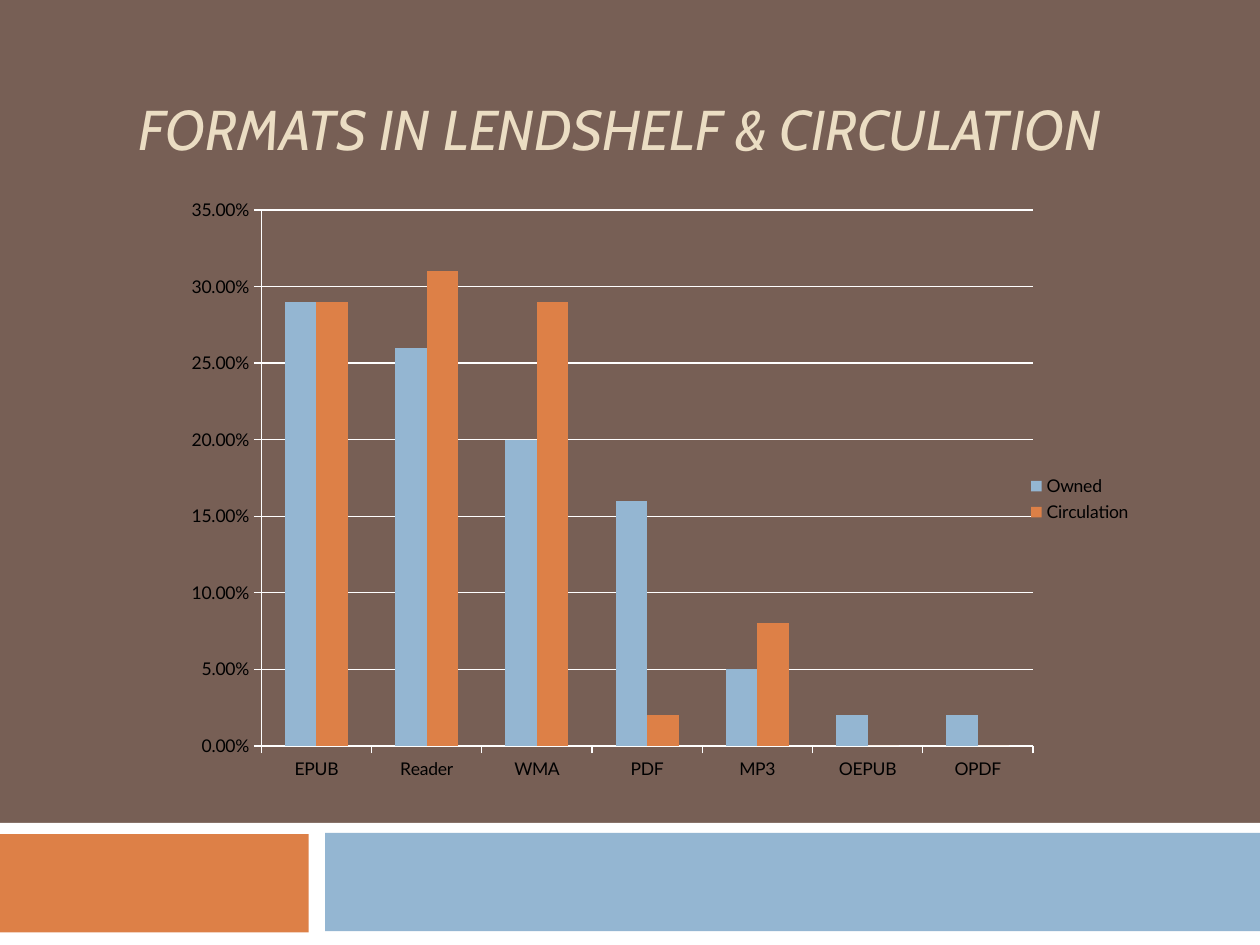
"""Build a slide comparing owned formats with their circulation."""
from typing import NamedTuple

from pptx import Presentation
from pptx.chart.chart import Chart
from pptx.chart.data import CategoryChartData
from pptx.dml.color import RGBColor
from pptx.enum.chart import XL_CHART_TYPE, XL_LEGEND_POSITION, XL_TICK_MARK
from pptx.enum.shapes import MSO_SHAPE
from pptx.enum.text import MSO_ANCHOR
from pptx.oxml import parse_xml
from pptx.oxml.ns import nsdecls, qn
from pptx.slide import Slide
from pptx.text.text import Font
from pptx.util import Pt

BROWN = RGBColor(0x77, 0x5F, 0x55)
WHITE = RGBColor(0xFF, 0xFF, 0xFF)
ORANGE = RGBColor(0xDD, 0x80, 0x47)
BLUE = RGBColor(0x94, 0xB6, 0xD2)
CREAM = RGBColor(0xEB, 0xDD, 0xC3)
BLACK = RGBColor(0x00, 0x00, 0x00)


class Band(NamedTuple):
    left: float
    top: float
    width: float
    height: float
    color: RGBColor


class Measure(NamedTuple):
    name: str
    values: tuple[float, ...]
    color: RGBColor


BANDS = (
    Band(0, 470.2, 720, 69.8, WHITE),
    Band(-0.7, 476.6, 177.1, 56.2, ORANGE),
    Band(185.8, 475.9, 534.2, 56.2, BLUE),
)
FORMATS = ("EPUB", "Reader", "WMA", "PDF", "MP3", "OEPUB", "OPDF")
MEASURES = (
    Measure("Owned", (0.29, 0.26, 0.2, 0.16, 0.05, 0.02, 0.02), BLUE),
    Measure("Circulation", (0.29, 0.31, 0.29, 0.02, 0.08, 0, 0), ORANGE),
)
PLOT = {"x": 0.105, "y": 0.016, "w": 0.782, "h": 0.897}


def style_font(font: Font, name: str, size: float, color: RGBColor) -> None:
    font.name = name
    font.size = Pt(size)
    font.color.rgb = color


def draw_band(s: Slide, band: Band) -> None:
    sp = s.shapes.add_shape(
        MSO_SHAPE.RECTANGLE, Pt(band.left), Pt(band.top), Pt(band.width), Pt(band.height)
    )
    sp.shadow.inherit = False
    sp.fill.solid()
    sp.fill.fore_color.rgb = band.color
    sp.line.fill.background()


def draw_title(s: Slide, text: str) -> None:
    tf = s.shapes.add_textbox(Pt(72), Pt(36), Pt(581.8), Pt(59.8)).text_frame
    tf.word_wrap = True
    tf.vertical_anchor = MSO_ANCHOR.BOTTOM
    r = tf.paragraphs[0].add_run()
    r.text = text
    style_font(r.font, "Cabin", 32, CREAM)
    r.font.italic = True


def place_plot(chart: Chart) -> None:
    area = chart._chartSpace.chart.plotArea
    for old in area.findall(qn("c:layout")):
        area.remove(old)
    modes = "".join(f'<c:{k}Mode val="edge"/>' for k in "xy")
    sizes = "".join(f'<c:{k} val="{v}"/>' for k, v in PLOT.items())
    area.insert(0, parse_xml(
        f'<c:layout {nsdecls("c")}><c:manualLayout><c:layoutTarget val="inner"/>'
        f"{modes}{sizes}</c:manualLayout></c:layout>"
    ))


def draw_chart(s: Slide) -> None:
    data = CategoryChartData(number_format="0.00%")
    data.categories = FORMATS
    for m in MEASURES:
        data.add_series(m.name, m.values)
    chart = s.shapes.add_chart(
        XL_CHART_TYPE.COLUMN_CLUSTERED, Pt(90.2), Pt(114), Pt(563.8), Pt(342), data
    ).chart
    style_font(chart.font, "Cabin", 10, WHITE)
    chart.has_title = False
    chart.has_legend = True
    chart.legend.position = XL_LEGEND_POSITION.RIGHT
    chart.legend.include_in_layout = False
    style_font(chart.legend.font, "Lato", 10, BLACK)

    plot = chart.plots[0]
    plot.vary_by_categories = False
    plot.gap_width = 150
    plot.overlap = 0
    for series, m in zip(plot.series, MEASURES):
        series.format.fill.solid()
        series.format.fill.fore_color.rgb = m.color

    value_axis = chart.value_axis
    value_axis.minimum_scale = 0
    value_axis.maximum_scale = 0.35
    value_axis.major_unit = 0.05
    value_axis.has_major_gridlines = True
    value_axis.tick_labels.number_format = "0.00%"
    value_axis.tick_labels.number_format_is_linked = False
    for axis in (chart.category_axis, value_axis):
        axis.major_tick_mark = XL_TICK_MARK.OUTSIDE
        style_font(axis.tick_labels.font, "Lato", 10, BLACK)
    for line in (
        chart.category_axis.format.line,
        value_axis.format.line,
        value_axis.major_gridlines.format.line,
    ):
        line.color.rgb = WHITE
        line.width = Pt(0.75)
    place_plot(chart)


def main() -> None:
    prs = Presentation()
    prs.slide_width, prs.slide_height = Pt(720), Pt(540)
    s = prs.slides.add_slide(prs.slide_layouts[6])
    s.background.fill.solid()
    s.background.fill.fore_color.rgb = BROWN
    for band in BANDS:
        draw_band(s, band)
    draw_title(s, "FORMATS IN LENDSHELF & CIRCULATION")
    draw_chart(s)
    prs.save("out.pptx")


if __name__ == "__main__":
    main()
